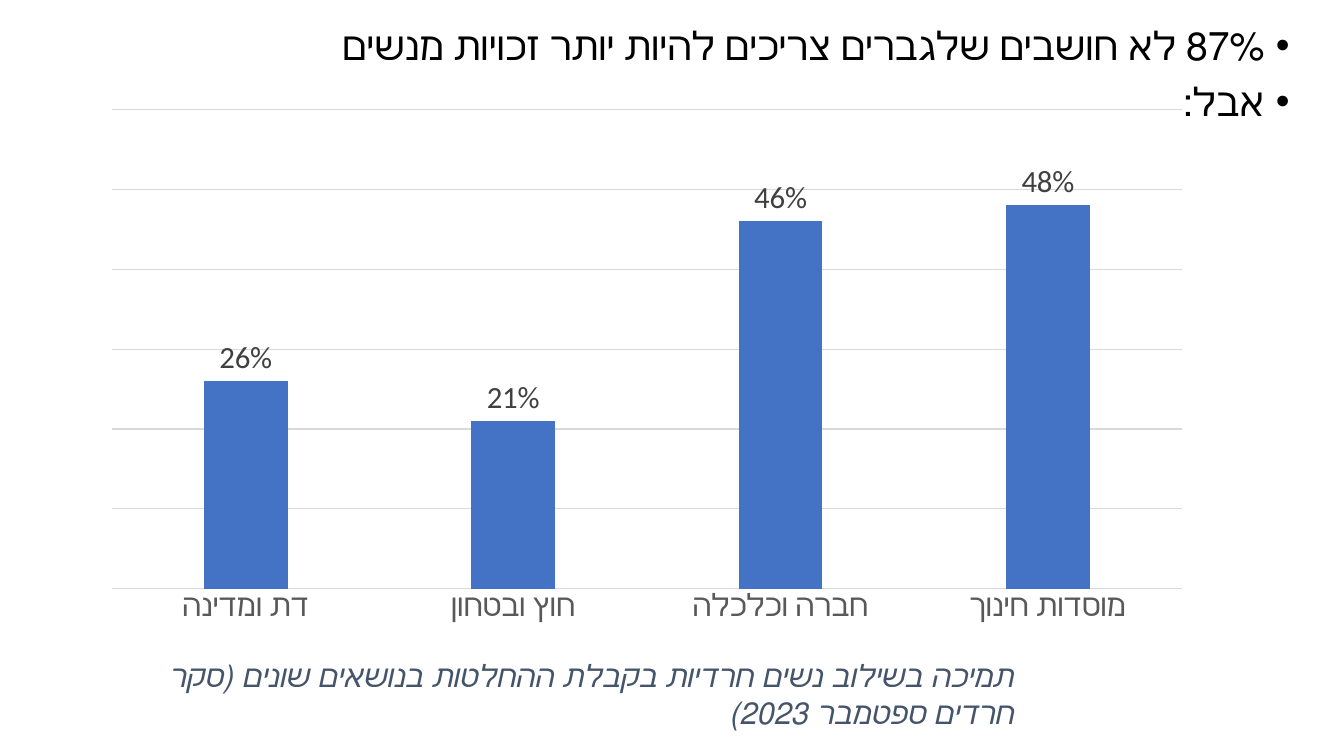
import pptx
import pptx.chart.data
import pptx.dml.color
import pptx.enum.chart
import pptx.enum.text
import pptx.util
from lxml import etree

Inches = pptx.util.Inches
Pt = pptx.util.Pt
CHART = pptx.enum.chart
TEXT = pptx.enum.text
FACE = "Calibri"
COLORS = {"ink": "000000", "note": "44546A", "bar": "4472C4",
          "grid": "D9D9D9", "axis": "595959", "label": "404040"}

POINTS = ["87% לא חושבים שלגברים צריכים להיות יותר זכויות מנשים", "אבל:"]
SHARES = {"מוסדות חינוך": 0.48, "חברה וכלכלה": 0.46,
          "חוץ ובטחון": 0.21, "דת ומדינה": 0.26}
NOTE = "תמיכה בשילוב נשים חרדיות בקבלת ההחלטות בנושאים שונים (סקר חרדים ספטמבר 2023)"


def color(name):
    return pptx.dml.color.RGBColor.from_string(COLORS[name])


def style(font, tone, **format):
    for key, value in {"name": FACE, **format}.items():
        setattr(font, key, value)
    font.color.rgb = color(tone)


def rule(line):
    line.color.rgb = color("grid")
    line.width = Pt(0.75)


def align(para):
    """Set a paragraph right to left, flush with the right edge."""
    para.alignment = TEXT.PP_ALIGN.RIGHT
    props = para._p.get_or_add_pPr()
    props.set("rtl", "1")
    return props


def add_points(slide, left, top, width, height):
    body = slide.placeholders[1]
    box = {"left": left, "top": top, "width": width, "height": height}
    for key, value in box.items():
        setattr(body, key, Inches(value))
    frame = body.text_frame
    frame.vertical_anchor = TEXT.MSO_ANCHOR.TOP
    frame.text = "\n".join(POINTS)
    for i, para in enumerate(frame.paragraphs):
        props = align(para)
        props.set("marL", str(Inches(0.25)))
        props.set("indent", str(-Inches(0.25)))
        para.line_spacing = 0.9
        para.space_before = Pt(10 if i else 0)
        space = pptx.oxml.ns.qn("a:buFont")
        etree.SubElement(props, space, typeface="Arial")
        etree.SubElement(props, pptx.oxml.ns.qn("a:buChar"), char="•")
        style(para.runs[0].font, "ink", size=Pt(28))


def add_bars(slide, left, top, width, height):
    data = pptx.chart.data.CategoryChartData(number_format="0%")
    data.categories = list(SHARES)
    data.add_series("Series 1", list(SHARES.values()))
    box = map(Inches, (left, top, width, height))
    chart = slide.shapes.add_chart(
        CHART.XL_CHART_TYPE.COLUMN_CLUSTERED, *box, data).chart
    chart.has_legend = chart.has_title = False
    style(chart.font, "ink", size=Pt(10))

    base = chart.category_axis
    base.reverse_order = True
    base.major_tick_mark = CHART.XL_TICK_MARK.NONE
    rule(base.format.line)
    style(base.tick_labels.font, "axis", size=Pt(22))

    scale = chart.value_axis
    scale.visible = False
    scale.minimum_scale, scale.maximum_scale = 0, 0.6
    scale.major_unit = 0.1
    scale.tick_labels.number_format = "0%"
    scale.has_major_gridlines = True
    rule(scale.major_gridlines.format.line)

    plot = chart.plots[0]
    plot.gap_width, plot.overlap = 219, -27
    plot.vary_by_categories = False
    fill = plot.series[0].format.fill
    fill.solid()
    fill.fore_color.rgb = color("bar")
    plot.has_data_labels = True
    labels = plot.data_labels
    format = {"show_value": True, "number_format": "0%",
              "number_format_is_linked": False,
              "position": CHART.XL_LABEL_POSITION.OUTSIDE_END}
    for key, value in format.items():
        setattr(labels, key, value)
    style(labels.font, "label", size=Pt(22))


def add_note(slide, left, top, width, height):
    box = map(Inches, (left, top, width, height))
    frame = slide.shapes.add_textbox(*box).text_frame
    frame.word_wrap = True
    frame.text = NOTE
    para = frame.paragraphs[0]
    align(para)
    style(para.runs[0].font, "note", size=Pt(22), italic=True)


def main():
    deck = pptx.Presentation()
    deck.slide_width, deck.slide_height = Inches(13.33), Inches(7.5)
    slide = deck.slides.add_slide(deck.slide_layouts[1])
    title = slide.shapes.title.element
    title.getparent().remove(title)
    add_points(slide, 1.39, 0.21, 11.5, 4.76)
    add_bars(slide, 0.89, 0.98, 11.05, 5.31)
    add_note(slide, 0.89, 6.47, 9.26, 1.21)
    deck.save("out.pptx")


if __name__ == "__main__":
    main()
